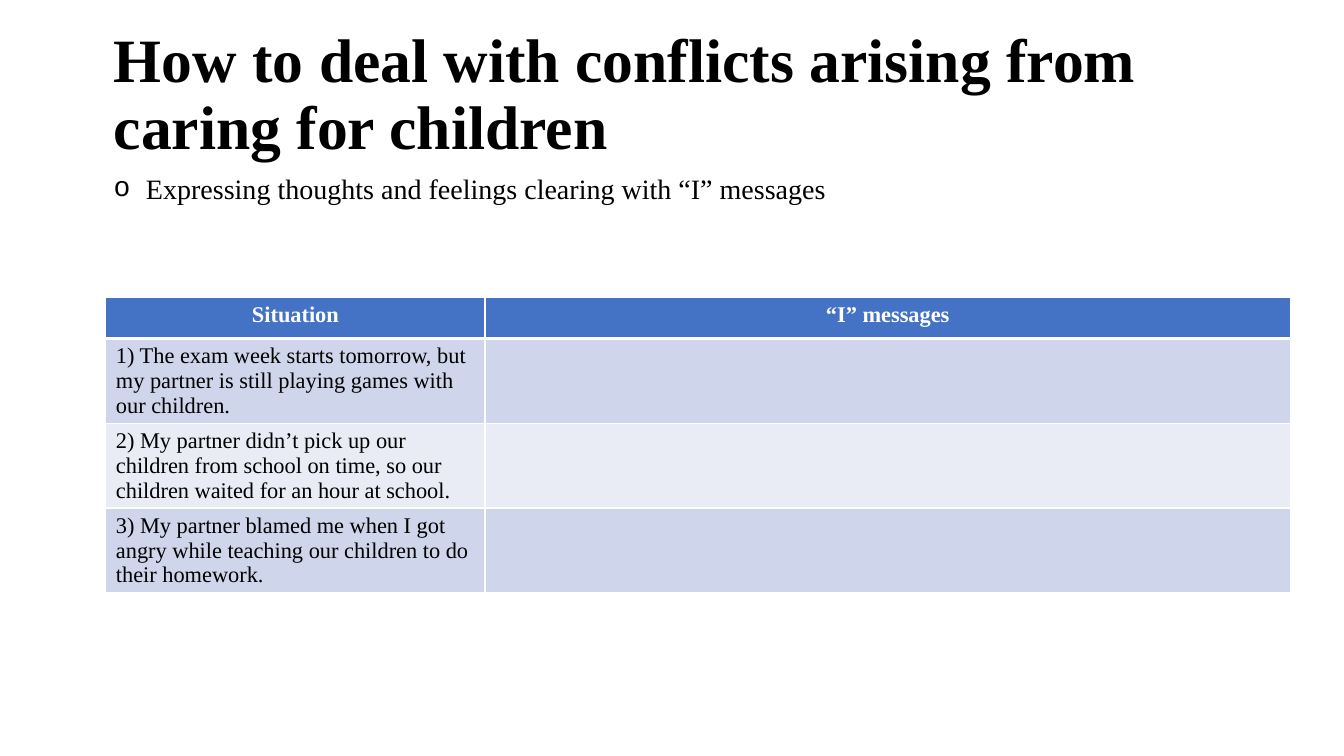
from dataclasses import dataclass

from lxml.etree import SubElement
from pptx import Presentation
from pptx.dml.color import RGBColor as Color
from pptx.enum.text import MSO_ANCHOR as Anchor, PP_ALIGN as Align
from pptx.oxml.ns import qn
from pptx.util import Inches, Pt


@dataclass(frozen=True)
class Theme:
    """Colours, font and type sizes of the slide."""
    font: str = "Times New Roman"
    bullet_font: str = "Courier New"
    black: str = "000000"
    white: str = "FFFFFF"
    header: str = "4472C4"
    bands: tuple = ("CFD5EA", "E9EBF5")
    title_size: int = 44
    body_size: int = 20
    table_size: int = 16
    border: int = 1
    header_border: int = 3


THEME = Theme()
TITLE = "How to deal with conflicts arising from caring for children"
POINT = "Expressing thoughts and feelings clearing with “I” messages"
ROWS = (
    ("Situation", "“I” messages"),
    ("1) The exam week starts tomorrow, but my partner is still playing games with our children.", ""),
    ("2) My partner didn’t pick up our children from school on time, "
     "so our children waited for an hour at school.", ""),
    ("3) My partner blamed me when I got angry while teaching our children to do their homework.", ""),
)
COLUMN_SHARES = (0.32, 0.68)
HEADER_SHARE = 0.14


def format_paragraph(paragraph, size, color, bold=False):
    """Give every run of a paragraph its font."""
    for run in paragraph.runs:
        run.font.name = THEME.font
        run.font.size = Pt(size)
        run.font.bold = bold
        run.font.color.rgb = Color.from_string(color)


def add_text(slide, box, text, size, bold=False, anchor=Anchor.TOP):
    """Place a wrapped text box and return its paragraph."""
    text_frame = slide.shapes.add_textbox(*map(Inches, box)).text_frame
    text_frame.word_wrap = True
    text_frame.vertical_anchor = anchor
    paragraph = text_frame.paragraphs[0]
    paragraph.text = text
    paragraph.line_spacing = 0.9
    format_paragraph(paragraph, size, THEME.black, bold)
    return paragraph


def add_title(slide, box):
    """Place the slide title."""
    add_text(slide, box, TITLE, THEME.title_size, True, Anchor.MIDDLE)


def add_point(slide, box):
    """Place the bulleted statement under the title."""
    paragraph = add_text(slide, box, POINT, THEME.body_size)
    paragraph.space_before = Pt(10)
    properties = paragraph._p.get_or_add_pPr()
    indent = Inches(0.32)
    properties.set("marL", str(indent))
    properties.set("indent", str(-indent))
    SubElement(properties, qn("a:buFont"), typeface=THEME.bullet_font)
    SubElement(properties, qn("a:buChar"), char="o")


def set_borders(cell, bottom):
    """Draw the white rules around a cell."""
    properties = cell._tc.get_or_add_tcPr()
    widths = {"L": THEME.border, "R": THEME.border, "T": THEME.border, "B": bottom}
    for side, width in widths.items():
        line = SubElement(properties, qn(f"a:ln{side}"), w=str(Pt(width)))
        SubElement(SubElement(line, qn("a:solidFill")), qn("a:srgbClr"), val=THEME.white)


def fill_cell(cell, text, row):
    """Write and style one table cell according to its row."""
    is_header = row == 0
    set_borders(cell, THEME.header_border if is_header else THEME.border)
    cell.fill.solid()
    fill = THEME.header if is_header else THEME.bands[(row - 1) % 2]
    cell.fill.fore_color.rgb = Color.from_string(fill)
    paragraph = cell.text_frame.paragraphs[0]
    paragraph.text = text
    paragraph.alignment = Align.CENTER if is_header else Align.LEFT
    format_paragraph(paragraph, THEME.table_size, THEME.white if is_header else THEME.black, is_header)


def add_situations(slide, box):
    """Place the table of situations and messages."""
    left, top, width, height = box
    table = slide.shapes.add_table(len(ROWS), len(COLUMN_SHARES), *map(Inches, box)).table
    for column, share in zip(table.columns, COLUMN_SHARES):
        column.width = Inches(width * share)
    body_share = (1 - HEADER_SHARE) / (len(ROWS) - 1)
    for index, texts in enumerate(ROWS):
        table.rows[index].height = Inches(height * (body_share if index else HEADER_SHARE))
        for cell, text in zip(table.rows[index].cells, texts):
            fill_cell(cell, text, index)


def main():
    """Build and save the presentation."""
    presentation = Presentation()
    presentation.slide_width = Inches(13.33)
    presentation.slide_height = Inches(7.5)
    slide = presentation.slides.add_slide(presentation.slide_layouts[6])
    add_situations(slide, (1.05, 2.95, 11.75, 2.92))
    add_title(slide, (1.03, 0.23, 11.5, 1.45))
    add_point(slide, (1.03, 1.69, 11.5, 0.62))
    presentation.save("out.pptx")


if __name__ == "__main__":
    main()
